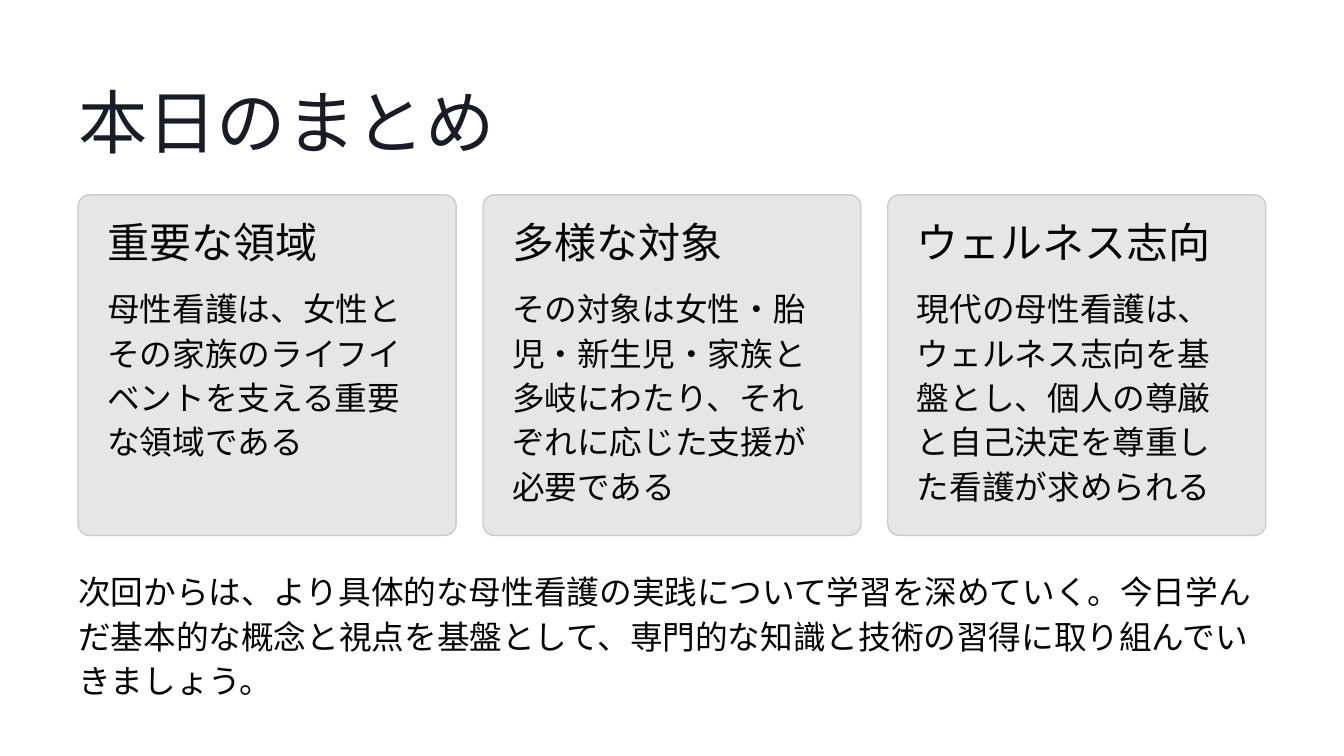
from lxml import etree
from pptx import Presentation
from pptx import util as u
from pptx.dml.color import RGBColor
from pptx.enum import shapes, text
from pptx.oxml import ns

Pt = u.Pt

# Content
TITLE = "本日のまとめ"
POINTS = [
    ("重要な領域", "母性看護は、女性とその家族のライフイベントを支える重要な領域である"),
    ("多様な対象", "その対象は女性・胎児・新生児・家族と多岐にわたり、それぞれに応じた支援が必要である"),
    ("ウェルネス志向", "現代の母性看護は、ウェルネス志向を基盤とし、個人の尊厳と自己決定を尊重した看護が求められる"),
]
CLOSING = (
    "次回からは、より具体的な母性看護の実践について学習を深めていく。"
    "今日学んだ基本的な概念と視点を基盤として、専門的な知識と技術の習得に取り組んでいきましょう。"
)

# Colours and text formats
NAVY = RGBColor(0x1B, 0x1B, 0x27)
INK = RGBColor(0x03, 0x03, 0x03)
CARD_FILL = RGBColor(0xE6, 0xE6, 0xE6)
CARD_LINE = RGBColor(0xCC, 0xCC, 0xCC)
TITLE_FORMAT = {"name": "Inter", "size": Pt(59.5), "color": NAVY, "spacing": Pt(74), "wrap": False}
HEADING_FORMAT = {"name": "Inter", "size": Pt(36), "color": INK, "spacing": Pt(37), "wrap": False}
BODY_FORMAT = {"name": "Cabin", "size": Pt(28), "color": INK, "spacing": Pt(38), "wrap": True}

# Layout in points
PAGE_W, PAGE_H = 1152, 648
MARGIN = 67
CONTENT_W = PAGE_W - 2 * MARGIN
CARD_TOP, CARD_W, CARD_H = 167, 324, 292
CARD_STEP = (CONTENT_W - CARD_W) / (len(POINTS) - 1)
PAD = 25
BODY_LINE = 38


def add_text(slide, words, left, top, width, height, style):
    box = slide.shapes.add_textbox(Pt(left), Pt(top), Pt(width), Pt(height))
    frame = box.text_frame
    frame_format = {
        "margin_left": 0, "margin_top": 0, "margin_right": 0, "margin_bottom": 0,
        "word_wrap": style["wrap"], "vertical_anchor": text.MSO_ANCHOR.TOP,
    }
    for key, value in frame_format.items():
        setattr(frame, key, value)
    paragraph = frame.paragraphs[0]
    paragraph.line_spacing = style["spacing"]
    run = paragraph.add_run()
    run.text = words
    for key in ("name", "size"):
        setattr(run.font, key, style[key])
    run.font.color.rgb = style["color"]
    # East Asian typeface
    etree.SubElement(run.font._element, ns.qn("a:ea"), typeface=style["name"])


def add_card(slide, left):
    card = slide.shapes.add_shape(
        shapes.MSO_SHAPE.ROUNDED_RECTANGLE, Pt(left), Pt(CARD_TOP), Pt(CARD_W), Pt(CARD_H))
    card.adjustments[0] = 0.034
    card.shadow.inherit = False
    card.fill.solid()
    card.fill.fore_color.rgb = CARD_FILL
    card.line.color.rgb = CARD_LINE
    card.line.width = Pt(1.2)


def main():
    deck = Presentation()
    deck.slide_width, deck.slide_height = Pt(PAGE_W), Pt(PAGE_H)
    slide = deck.slides.add_slide(deck.slide_layouts[6])

    # Title
    add_text(slide, TITLE, MARGIN, 65.5, 595, 74, TITLE_FORMAT)

    # Summary cards
    for index, (heading, body) in enumerate(POINTS):
        left = MARGIN + index * CARD_STEP
        inner_w = CARD_W - 2 * PAD
        add_card(slide, left)
        add_text(slide, heading, left + PAD, CARD_TOP + PAD, inner_w, 37, HEADING_FORMAT)
        add_text(slide, body, left + PAD, 243.5, inner_w, 5 * BODY_LINE, BODY_FORMAT)

    # Closing message
    add_text(slide, CLOSING, MARGIN, 486, CONTENT_W, 2 * BODY_LINE, BODY_FORMAT)

    deck.save("out.pptx")


if __name__ == "__main__":
    main()
